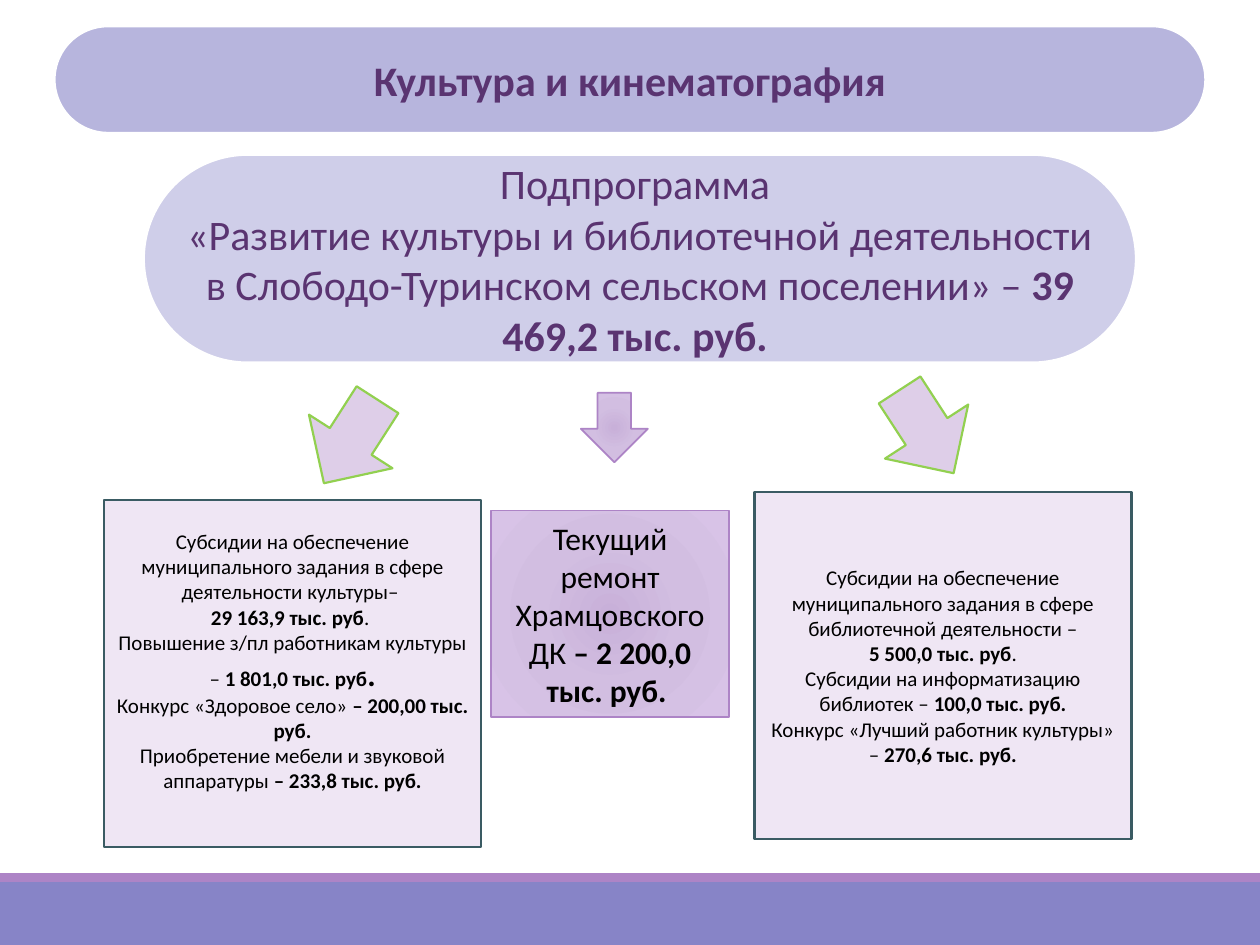
import pptx
import pptx.dml.color
import pptx.enum.shapes
import pptx.enum.text
import pptx.oxml
import pptx.oxml.ns
import pptx.util

Cm = pptx.util.Cm
Pt = pptx.util.Pt
RGBColor = pptx.dml.color.RGBColor
Shape = pptx.enum.shapes.MSO_SHAPE

WHITE = RGBColor(0xFF, 0xFF, 0xFF)
BLACK = RGBColor(0x00, 0x00, 0x00)
PLUM = RGBColor(0x5A, 0x34, 0x71)
INDIGO = RGBColor(0x87, 0x84, 0xC7)
VIOLET = RGBColor(0xAD, 0x84, 0xC6)
TITLE_FILL = RGBColor(0xB7, 0xB5, 0xDD)
PROGRAM_FILL = RGBColor(0xCF, 0xCE, 0xE9)
ARROW_FILL = RGBColor(0xDE, 0xCE, 0xE8)
SUBSIDY_FILL = RGBColor(0xEF, 0xE6, 0xF4)
GREEN = RGBColor(0x92, 0xD0, 0x50)
TEAL = RGBColor(0x3A, 0x5B, 0x63)
GLOW_STOPS = [
    (0, RGBColor(0xC8, 0xB0, 0xD9)),
    (45, RGBColor(0xD2, 0xBE, 0xE1)),
    (100, RGBColor(0xD8, 0xC3, 0xE7)),
]

deck = pptx.Presentation()
deck.slide_width = Cm(25.4)
deck.slide_height = Cm(19.05)
page = deck.slides.add_slide(deck.slide_layouts[6])


def add_box(kind, place, fill, line=None, weight=1.25):
    box = page.shapes.add_shape(kind, *[Cm(length) for length in place])
    box.shadow.inherit = False
    box.fill.solid()
    box.fill.fore_color.rgb = fill
    if line is None:
        box.line.fill.background()
    else:
        box.line.color.rgb = line
        box.line.width = Pt(weight)
    return box


def write_text(box, paragraphs, size, color):
    frame = box.text_frame
    frame.word_wrap = True
    frame.vertical_anchor = pptx.enum.text.MSO_ANCHOR.MIDDLE
    for index, spans in enumerate(paragraphs):
        para = frame.add_paragraph() if index else frame.paragraphs[0]
        para.alignment = pptx.enum.text.PP_ALIGN.CENTER
        for text, bold, *own_size in spans:
            span = para.add_run()
            span.text = text
            span.font.name = "Calibri"
            span.font.size = Pt(own_size[0] if own_size else size)
            span.font.bold = bold
            span.font.color.rgb = color


add_box(Shape.RECTANGLE, (0, 17.78, 25.4, 1.27), INDIGO)
add_box(Shape.RECTANGLE, (0, 17.6, 25.4, 0.18), VIOLET)

title = add_box(Shape.ROUNDED_RECTANGLE, (1.1, 0.53, 23.2, 2.15), TITLE_FILL, WHITE)
title.adjustments[0] = 0.5
write_text(title, [[("Культура и кинематография", True)]], 24, PLUM)

program = add_box(Shape.ROUNDED_RECTANGLE, (2.9, 3.12, 20, 4.19), PROGRAM_FILL, WHITE)
program.adjustments[0] = 0.5
write_text(program, [
    [("Подпрограмма ", False)],
    [("«Развитие культуры и библиотечной деятельности в Слободо-Туринском "
      "сельском поселении» – ", False), ("39 469,2 тыс. руб. ", True)],
], 24, PLUM)

for left, top, angle in [(6.07, 7.9, 32.7), (17.68, 7.7, 327)]:
    arrow = add_box(Shape.DOWN_ARROW, (left, top, 2, 2), ARROW_FILL, GREEN)
    arrow.rotation = angle

culture = add_box(Shape.RECTANGLE, (2.1, 10.08, 7.6, 7), SUBSIDY_FILL, TEAL)
culture.text_frame.margin_bottom = Cm(0.64)
write_text(culture, [
    [("Субсидии на обеспечение муниципального задания в сфере деятельности культуры– ", False)],
    [("29 163,9 тыс. руб", True), (". ", False)],
    [("Повышение з/пл работникам культуры – ", False), ("1 801,0 тыс. руб", True), (".", True, 18)],
    [("Конкурс «Здоровое село» ", False), ("– 200,00 тыс. руб.", True)],
    [("Приобретение мебели и звуковой аппаратуры ", False), ("– 233,8 тыс. руб.", True)],
], 12, BLACK)

library = add_box(Shape.RECTANGLE, (15.21, 9.92, 7.6, 7), SUBSIDY_FILL, TEAL)
write_text(library, [
    [("Субсидии на обеспечение муниципального задания в сфере библиотечной деятельности –", False)],
    [("5 500,0 тыс. руб", True), (".", False)],
    [("Субсидии на информатизацию библиотек – ", False), ("100,0 тыс. руб.", True)],
    [("Конкурс «Лучший работник культуры» – ", False), ("270,6 тыс. руб.", True)],
], 12, BLACK)

repair = add_box(Shape.RECTANGLE, (9.9, 10.29, 4.8, 4.17), GLOW_STOPS[0][1], VIOLET, 1)
write_text(repair, [
    [("Текущий ремонт Храмцовского ДК ", False), ("– 2 200,0 тыс. руб. ", True)],
], 18, BLACK)
repair_arrow = add_box(Shape.DOWN_ARROW, (11.71, 7.92, 1.35, 1.4), GLOW_STOPS[0][1], VIOLET, 1)

stops = "".join(
    f'<a:gs pos="{position * 1000}"><a:srgbClr val="{color}"/></a:gs>'
    for position, color in GLOW_STOPS
)
for box in (repair, repair_arrow):
    glow = pptx.oxml.parse_xml(
        f'<a:gradFill {pptx.oxml.ns.nsdecls("a")}><a:gsLst>{stops}</a:gsLst>'
        '<a:path path="circle"><a:fillToRect l="100000" t="100000" r="100000" b="100000"/>'
        '</a:path></a:gradFill>'
    )
    properties = box.element.spPr
    properties.replace(properties.find(pptx.oxml.ns.qn("a:solidFill")), glow)

deck.save("out.pptx")
